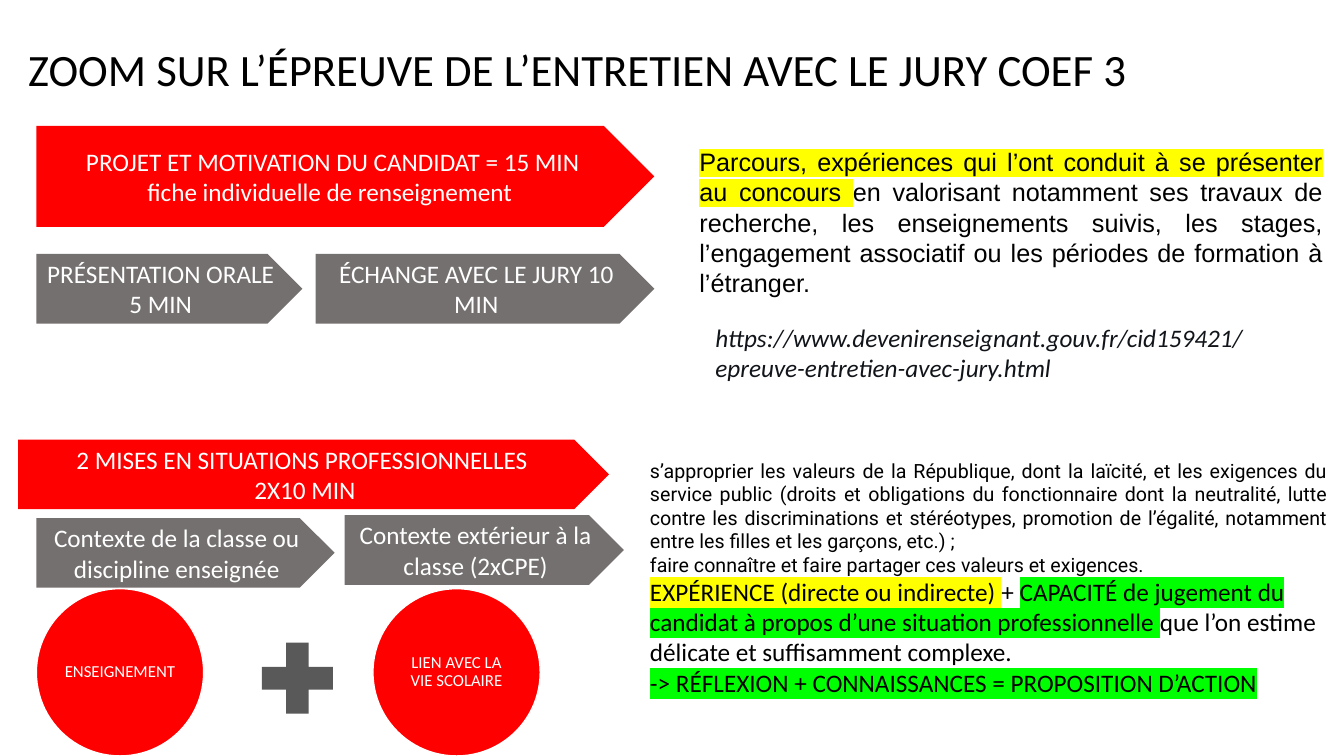
from lxml.etree import SubElement
from pptx import Presentation
from pptx.dml.color import RGBColor
from pptx.enum.shapes import MSO_SHAPE as Preset
from pptx.enum.text import MSO_ANCHOR as Anchor, MSO_AUTO_SIZE as AutoSize, PP_ALIGN as Align
from pptx.oxml.ns import qn
from pptx.util import Pt

BLACK = RGBColor(0x00, 0x00, 0x00)
WHITE = RGBColor(0xFF, 0xFF, 0xFF)
RED = RGBColor(0xFF, 0x00, 0x00)
GRAY = RGBColor(0x75, 0x70, 0x70)
DARK_GRAY = RGBColor(0x59, 0x59, 0x59)
INK = RGBColor(0x11, 0x15, 0x1A)
YELLOW = RGBColor(0xFF, 0xFF, 0x00)
GREEN = RGBColor(0x00, 0xFF, 0x00)

BANNER_LEFT = 26
CIRCLE = 119.5
STEP_HEIGHT = 49.7


def write(paragraph, text, size=18, font="Calibri", color=BLACK, italic=None, highlight=None):
    """Append one formatted run to the paragraph."""
    run = paragraph.add_run()
    run.text = text
    run.font.size = Pt(size)
    run.font.italic = italic
    run.font.color.rgb = color
    if highlight is not None:
        mark = SubElement(run.font._element, qn("a:highlight"))
        SubElement(mark, qn("a:srgbClr")).set("val", str(highlight))
    run.font.name = font


class Board:
    def __init__(self, slide, font="Calibri"):
        self.slide = slide
        self.font = font

    def fill_frame(self, frame, paragraphs, align, spacing=None, **style):
        """Each paragraph is a list of (text, run format) pairs."""
        frame.word_wrap = True
        for index, runs in enumerate(paragraphs):
            paragraph = frame.paragraphs[0] if index == 0 else frame.add_paragraph()
            paragraph.alignment = align[index] if isinstance(align, list) else align
            paragraph.line_spacing = spacing
            for text, extra in runs:
                write(paragraph, text, **{"font": self.font, **style, **extra})

    def text(self, left, top, width, height, paragraphs, align=Align.LEFT, **style):
        box = self.slide.shapes.add_textbox(Pt(left), Pt(top), Pt(width), Pt(height))
        self.fill_frame(box.text_frame, paragraphs, align, **style)
        box.text_frame.auto_size = AutoSize.SHAPE_TO_FIT_TEXT

    def shape(self, preset, left, top, width, height, fill):
        shape = self.slide.shapes.add_shape(preset, Pt(left), Pt(top), Pt(width), Pt(height))
        shape.shadow.inherit = False
        shape.fill.solid()
        shape.fill.fore_color.rgb = fill
        shape.line.fill.background()
        return shape

    def arrow(self, left, top, width, height, fill, *lines):
        arrow = self.shape(Preset.PENTAGON, left, top, width, height, fill)
        arrow.text_frame.vertical_anchor = Anchor.MIDDLE
        self.fill_frame(arrow.text_frame, [[(line, {})] for line in lines],
                        Align.CENTER, color=WHITE)

    def circle(self, left, top, label):
        circle = self.shape(Preset.OVAL, left, top, CIRCLE, CIRCLE, RED)
        circle.line.color.rgb = WHITE
        circle.line.width = Pt(1)
        frame = circle.text_frame
        frame.vertical_anchor = Anchor.MIDDLE
        frame.margin_left = frame.margin_right = Pt(1.2)
        frame.margin_top = frame.margin_bottom = Pt(1.2)
        self.fill_frame(frame, [[(label, {})]], Align.CENTER, spacing=0.9, size=12, color=WHITE)

    def plus(self, left, top, side):
        plus = self.shape(Preset.MATH_PLUS, left, top, side, side, DARK_GRAY)
        plus.adjustments[0] = 0.235


def main():
    deck = Presentation()
    deck.slide_width, deck.slide_height = Pt(960), Pt(540)
    board = Board(deck.slides.add_slide(deck.slide_layouts[6]))

    board.text(13, 26, 939, 46,
               [[("ZOOM SUR L’ÉPREUVE DE L’ENTRETIEN AVEC LE JURY COEF 3", {})]], size=32)

    board.arrow(BANNER_LEFT, 90, 441.4, 72, RED,
                "PROJET ET MOTIVATION DU CANDIDAT = 15 MIN",
                "fiche individuelle de renseignement ")
    board.arrow(13, 314, 422, STEP_HEIGHT, RED,
                "2 MISES EN SITUATIONS PROFESSIONNELLES ", "2X10 MIN")
    steps = [
        (BANNER_LEFT, 181.4, 190, "PRÉSENTATION ORALE 5 MIN"),
        (225.4, 181.4, 242, "ÉCHANGE AVEC LE JURY 10 MIN"),
        (BANNER_LEFT, 370, 213, "Contexte de la classe ou discipline enseignée"),
        (246.2, 368, 199.5, "Contexte extérieur à la classe (2xCPE)"),
    ]
    for left, top, width, label in steps:
        board.arrow(left, top, width, STEP_HEIGHT, GRAY, label)

    for left, label in [(BANNER_LEFT, "ENSEIGNEMENT"), (266.4, "LIEN AVEC LA VIE SCOLAIRE")]:
        board.circle(left, 420.5, label)
    board.plus(178, 450, 69)

    board.text(492.5, 101, 459.4, 116.6, [[
        ("Parcours, expériences qui l’ont conduit à se présenter au concours ",
         {"highlight": YELLOW}),
        ("en valorisant notamment ses travaux de recherche, les enseignements suivis, "
         "les stages, l’engagement associatif ou les périodes de formation à l’étranger. ", {}),
    ]], align=Align.JUSTIFY, font="Arial")
    board.text(504, 226.8, 448, 41, [[
        ("https://www.devenirenseignant.gouv.fr/cid159421/epreuve-entretien-avec-jury.html", {}),
    ]], color=INK, italic=True)

    values = {"font": "Roboto", "size": 14}
    board.text(457.2, 324, 498.2, 201, [
        [("s’approprier les valeurs de la République, dont la laïcité, et les exigences du "
          "service public (droits et obligations du fonctionnaire dont la neutralité, lutte "
          "contre les discriminations et stéréotypes, promotion de l’égalité, notamment "
          "entre les filles et les garçons, etc.) ;", values)],
        [("faire connaître et faire partager ces valeurs et exigences.", values)],
        [("EXPÉRIENCE (directe ou indirecte) ", {"highlight": YELLOW}),
         ("+ ", {}),
         ("CAPACITÉ de jugement du candidat à propos d’une situation professionnelle ",
          {"highlight": GREEN}),
         ("que l’on estime délicate et suffisamment complexe.", {})],
        [("-> RÉFLEXION + CONNAISSANCES = PROPOSITION D’ACTION", {"highlight": GREEN})],
    ], align=[Align.JUSTIFY] + [Align.LEFT] * 3)

    deck.save("out.pptx")


if __name__ == "__main__":
    main()
